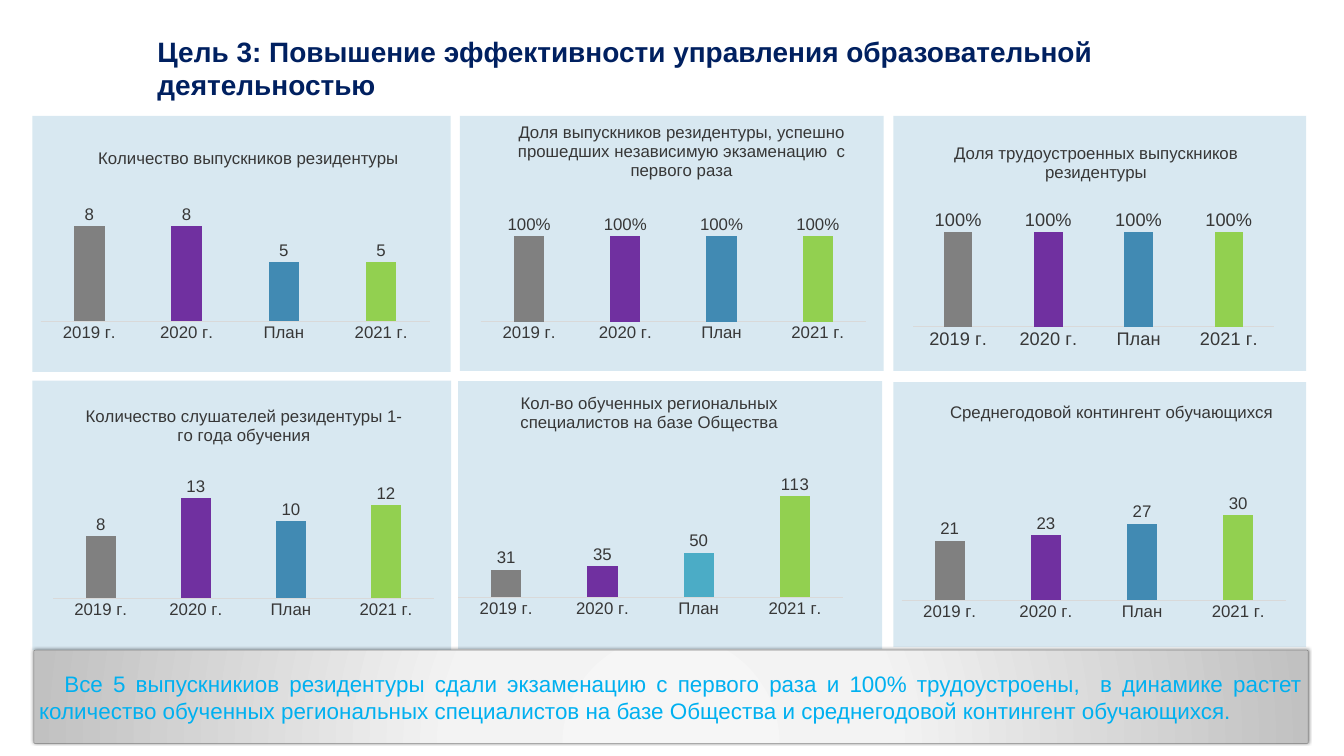
from dataclasses import dataclass

from lxml import etree
from pptx import Presentation
from pptx.chart.data import CategoryChartData
from pptx.dml.color import RGBColor
from pptx.enum.chart import XL_CHART_TYPE as ChartType, XL_LABEL_POSITION as LabelPosition
from pptx.enum.chart import XL_TICK_MARK as TickMark
from pptx.enum.shapes import MSO_SHAPE as ShapeType
from pptx.enum.text import MSO_ANCHOR as Anchor, PP_ALIGN as Align
from pptx.oxml import parse_xml
from pptx.oxml.ns import nsdecls, qn
from pptx.util import Inches, Pt

FONT = "Arial"
NAVY = RGBColor(0x00, 0x20, 0x60)
SKY = RGBColor(0x00, 0xB0, 0xF0)
DARK = RGBColor(0x37, 0x37, 0x37)
AXIS_GRAY = RGBColor(0xD9, 0xD9, 0xD9)
BORDER_GRAY = RGBColor(0x83, 0x83, 0x83)
PANEL_BLUE = RGBColor(0xD8, 0xE8, 0xF1)
GRAY = RGBColor(0x80, 0x80, 0x80)
PURPLE = RGBColor(0x70, 0x30, 0xA0)
BLUE = RGBColor(0x41, 0x8A, 0xB3)
TEAL = RGBColor(0x4B, 0xAC, 0xC6)
GREEN = RGBColor(0x92, 0xD0, 0x50)

CATEGORIES = ("2019 г.", "2020 г.", "План", "2021 г.")


@dataclass(frozen=True)
class Panel:
    """One chart; box in inches, title and plot places as fractions of it."""
    title: str
    values: tuple[float, ...]
    maximum: float
    box: tuple[float, float, float, float]
    title_at: tuple[float, float]
    plot: tuple[float, float, float, float]
    number_format: str = "General"
    size: int = 24
    plan_color: RGBColor = BLUE


PANELS = (
    Panel("Количество выпускников резидентуры", (8, 8, 5, 5), 9,
          (0.64, 2.3, 8.3, 5.08), (0.15, 0.11), (0.02, 0.385, 0.93, 0.418)),
    Panel("Доля выпускников резидентуры, успешно прошедших независимую "
          "экзаменацию  с первого раза", (1, 1, 1, 1), 1.2,
          (9.12, 2.3, 8.41, 5.06), (0.13, 0.01), (0.05, 0.406, 0.908, 0.401), "0%"),
    Panel("Доля трудоустроенных выпускников резидентуры", (1, 1, 1, 1), 1.2,
          (17.72, 2.3, 8.19, 5.06), (0.14, 0.09), (0.048, 0.38, 0.874, 0.446), "0%", 26),
    Panel("Количество слушателей резидентуры 1-го года обучения", (8, 13, 10, 12), 14,
          (0.64, 7.55, 8.31, 5.35), (0.12, 0.08), (0.05, 0.406, 0.908, 0.401)),
    Panel("Кол-во обученных региональных специалистов на базе Общества",
          (31, 35, 50, 113), 120, (9.08, 7.56, 8.42, 5.32), (0.14, 0.03),
          (0, 0.406, 0.908, 0.401), "0", plan_color=TEAL),
    Panel("Среднегодовой контингент обучающихся", (21, 23, 27, 30), 35,
          (17.72, 7.58, 8.19, 5.26), (0.13, 0.06), (0.02, 0.449, 0.932, 0.374)),
)


def style_font(font, size: float, color: RGBColor, bold: bool = False) -> None:
    font.name, font.size, font.bold = FONT, Pt(size), bold
    font.color.rgb = color


def write_text(text_frame, *lines: str, size: float, color: RGBColor, bold: bool = False,
               align: Align = Align.LEFT, indent: float = 0) -> None:
    for index, line in enumerate(lines):
        paragraph = text_frame.paragraphs[0] if index == 0 else text_frame.add_paragraph()
        paragraph.alignment = align
        if indent:
            paragraph._p.get_or_add_pPr().set("indent", str(Inches(indent)))
        run = paragraph.add_run()
        run.text = line
        style_font(run.font, size, color, bold)


def add_rounded_box(slide, box: tuple[float, ...], adjustment: float):
    shape = slide.shapes.add_shape(ShapeType.ROUNDED_RECTANGLE, *map(Inches, box))
    shape.adjustments[0] = adjustment
    shape.shadow.inherit = False
    shape.fill.background()
    shape.line.fill.background()
    shape.text_frame.word_wrap = True
    shape.text_frame.vertical_anchor = Anchor.MIDDLE
    return shape


def add_banner_effects(shape) -> None:
    """Give the shape a circular gradient and a soft outer shadow."""
    properties = shape._element.spPr
    stops = "".join(f'<a:gs pos="{position}000"><a:srgbClr val="{color}"/></a:gs>'
                    for position, color in ((0, "F6F6F6"), (34, "F3F3F3"), (100, "C1C1C1")))
    gradient = parse_xml(
        f'<a:gradFill {nsdecls("a")} rotWithShape="1"><a:gsLst>{stops}</a:gsLst>'
        '<a:path path="circle"><a:fillToRect l="50000" t="155000" r="50000" b="-55000"/>'
        '</a:path></a:gradFill>')
    properties.replace(properties.find(qn("a:noFill")), gradient)
    shadow = parse_xml(
        f'<a:outerShdw {nsdecls("a")} blurRad="{Pt(5)}" dist="{Pt(2)}" dir="14700000" '
        'algn="t" rotWithShape="0"><a:srgbClr val="000000"><a:alpha val="50000"/>'
        '</a:srgbClr></a:outerShdw>')
    properties.find(qn("a:effectLst")).append(shadow)


def set_layout(parent, index: int, inner: bool = False, **fractions: float) -> None:
    """Place a chart part by fractions of the chart's size."""
    for previous in parent.findall(qn("c:layout")):
        parent.remove(previous)
    layout = etree.Element(qn("c:layout"))
    manual = etree.SubElement(layout, qn("c:manualLayout"))
    if inner:
        etree.SubElement(manual, qn("c:layoutTarget"), val="inner")
    for name in "xy":
        etree.SubElement(manual, qn(f"c:{name}Mode"), val="edge")
    for name, value in fractions.items():
        etree.SubElement(manual, qn(f"c:{name}"), val=str(value))
    parent.insert(index, layout)


def add_panel(slide, panel: Panel) -> None:
    data = CategoryChartData(number_format=panel.number_format)
    data.categories = CATEGORIES
    data.add_series("Series 1", panel.values)
    chart = slide.shapes.add_chart(
        ChartType.COLUMN_CLUSTERED, *map(Inches, panel.box), data).chart
    style_font(chart.font, panel.size, DARK)
    chart.has_legend = False
    write_text(chart.chart_title.text_frame, panel.title, size=24, color=DARK,
               align=Align.CENTER)
    x, y = panel.title_at
    set_layout(chart.chart_title._element, 1, x=x, y=y)
    x, y, width, height = panel.plot
    space = chart._chartSpace
    set_layout(space.chart.plotArea, 0, inner=True, x=x, y=y, w=width, h=height)
    space.find(qn("c:txPr")).addprevious(parse_xml(
        f'<c:spPr {nsdecls("c", "a")}><a:solidFill><a:srgbClr val="{PANEL_BLUE}"/>'
        '</a:solidFill><a:ln><a:noFill/></a:ln></c:spPr>'))

    value_axis, category_axis = chart.value_axis, chart.category_axis
    value_axis.visible = value_axis.has_major_gridlines = False
    value_axis.minimum_scale, value_axis.maximum_scale = 0, panel.maximum
    category_axis.major_tick_mark = category_axis.minor_tick_mark = TickMark.NONE
    category_axis.format.line.color.rgb = AXIS_GRAY
    category_axis.format.line.width = Pt(0.75)
    style_font(category_axis.tick_labels.font, panel.size, DARK)

    plot = chart.plots[0]
    plot.vary_by_categories = False
    plot.gap_width, plot.overlap = 219, -27
    series = plot.series[0]
    for index, color in enumerate((GRAY, PURPLE, panel.plan_color, GREEN)):
        fill = series.points[index].format.fill
        fill.solid()
        fill.fore_color.rgb = color
    labels = series.data_labels
    labels.show_value = True
    labels.position = LabelPosition.OUTSIDE_END
    labels.number_format = panel.number_format
    labels.number_format_is_linked = False
    style_font(labels.font, panel.size, DARK)


def main() -> None:
    presentation = Presentation()
    presentation.slide_width, presentation.slide_height = Inches(26.66), Inches(15)
    slide = presentation.slides.add_slide(presentation.slide_layouts[6])

    heading = add_rounded_box(slide, (3.01, 0.39, 21.65, 1.91), 0.028)
    write_text(heading.text_frame,
               "Цель 3: Повышение эффективности управления образовательной",
               "деятельностью", size=40, color=NAVY, bold=True)
    for panel in PANELS:
        add_panel(slide, panel)

    banner = add_rounded_box(slide, (0.67, 12.9, 25.28, 1.85), 0.015)
    add_banner_effects(banner)
    banner.line.color.rgb = BORDER_GRAY
    banner.line.width = Pt(0.75)
    write_text(banner.text_frame,
               "Все 5 выпускникиов резидентуры сдали экзаменацию с первого раза и 100% "
               "трудоустроены,  в динамике растет количество обученных региональных "
               "специалистов на базе Общества и среднегодовой контингент обучающихся.",
               size=32, color=SKY, align=Align.JUSTIFY, indent=0.5)
    presentation.save("out.pptx")


if __name__ == "__main__":
    main()
